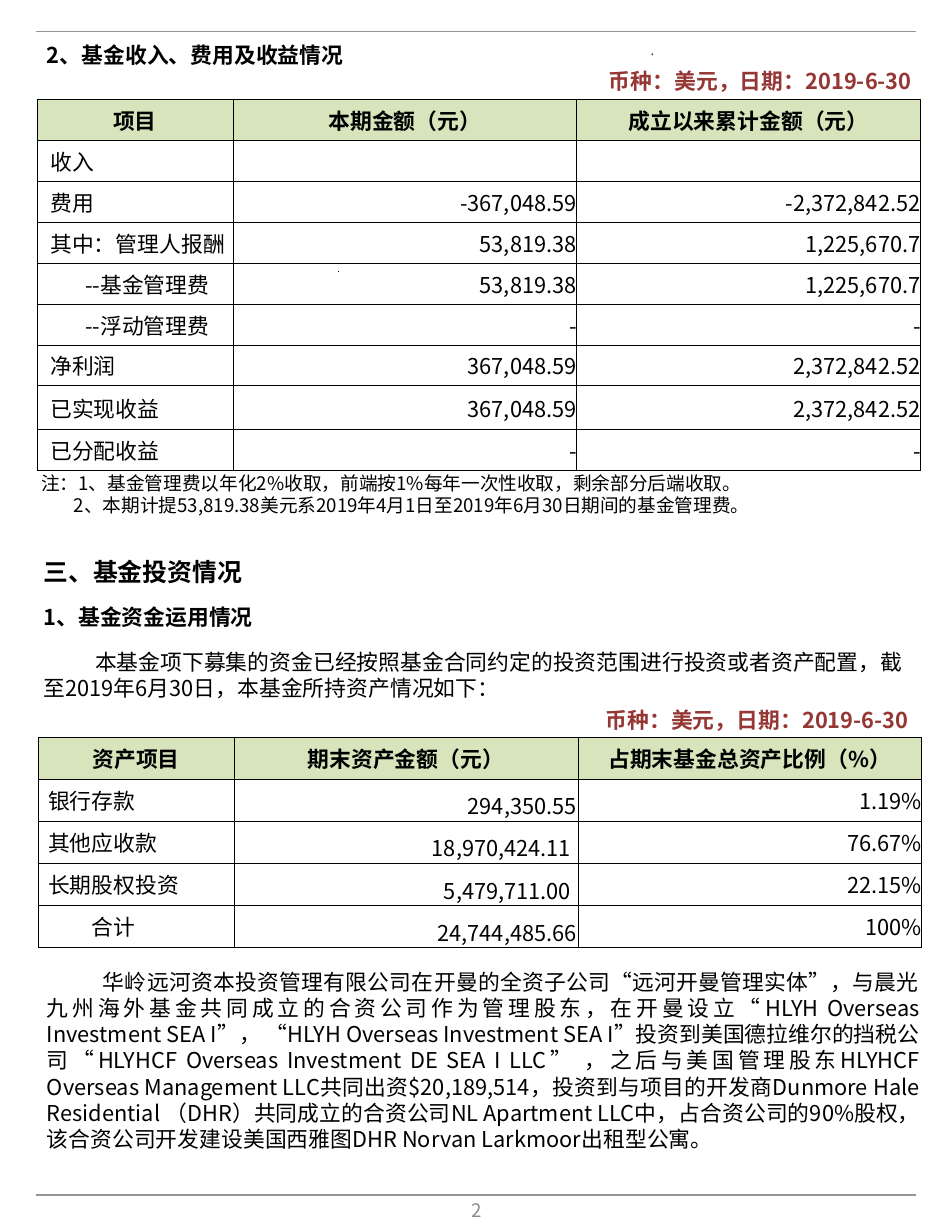
from dataclasses import dataclass

from lxml.etree import SubElement
from pptx import Presentation
from pptx.dml.color import RGBColor
from pptx.enum.shapes import MSO_CONNECTOR
from pptx.enum.text import MSO_ANCHOR, PP_ALIGN
from pptx.oxml.ns import qn
from pptx.util import Inches, Pt


@dataclass(frozen=True)
class Theme:
    face: str = "Noto Sans CJK SC"
    ink: str = "000000"
    red: str = "953735"
    green: str = "D7E4BC"
    rule: str = "939598"
    blue: str = "2E5A79"
    gray: str = "8C8C8C"
    head: int = 16
    body: int = 14
    note: int = 12
    lead: float = 1.2


T = Theme()
LEFT, MID, RIGHT = PP_ALIGN.LEFT, PP_ALIGN.CENTER, PP_ALIGN.RIGHT
DATE = "币种：美元，日期：2019-6-30"
COLS = [1.75, 3.07, 3.07]


def style(para, size=T.body, color=T.ink, bold=False, align=LEFT):
    para.alignment = align
    font = para.font
    font.name, font.size, font.bold = T.face, Pt(size), bold
    font.color.rgb = RGBColor.from_string(color)
    SubElement(font._element, qn("a:ea"), typeface=T.face)


def add_text(slide, box, lines, anchor=MSO_ANCHOR.TOP):
    frame = slide.shapes.add_textbox(*map(Inches, box)).text_frame
    frame.word_wrap = True
    frame.vertical_anchor = anchor
    for i, (text, look) in enumerate(lines):
        para = frame.add_paragraph() if i else frame.paragraphs[0]
        look = dict(look)
        gap, indent = look.pop("gap", 0), look.pop("indent", 0)
        lead = look.pop("lead", look.get("size", T.body) * T.lead)
        para.text = text
        style(para, **look)
        para.space_before, para.line_spacing = Pt(gap), Pt(lead)
        para._p.get_or_add_pPr().set("indent", str(Inches(indent)))


def add_line(slide, start, end, color):
    line = slide.shapes.add_connector(
        MSO_CONNECTOR.STRAIGHT, *map(Inches, start + end))
    line.line.color.rgb = RGBColor.from_string(color)
    line.line.width = Pt(1)
    SubElement(line._element.spPr, qn("a:effectLst"))


def add_dot(slide, x, y, side=0.01):
    form = slide.shapes.build_freeform(Inches(x), Inches(y))
    form.add_line_segments([(Inches(x + dx), Inches(y + dy)) for dx, dy in
                            ((side, 0), (side, side), (0, side))])
    dot = form.convert_to_shape()
    dot.shadow.inherit = False
    dot.fill.solid()
    dot.fill.fore_color.rgb = RGBColor.from_string(T.ink)
    dot.line.fill.background()


def edge(cell):
    props = cell._tc.get_or_add_tcPr()
    for side in ("lnL", "lnR", "lnT", "lnB"):
        line = SubElement(props, qn(f"a:{side}"), w=str(Pt(0.5)))
        fill = SubElement(line, qn("a:solidFill"))
        SubElement(fill, qn("a:srgbClr"), val=T.ink)


def add_grid(slide, box, head, rows, highs, low=False):
    shape = slide.shapes.add_table(len(highs), len(head), *map(Inches, box))
    table = shape.table
    table.first_row = table.horz_banding = False
    for col, wide in zip(table.columns, COLS):
        col.width = Inches(wide)
    for row, high in zip(table.rows, highs):
        row.height = Inches(high)
    data = [(0, *head)] + rows
    for r, (inset, *texts) in enumerate(data):
        for c, text in enumerate(texts):
            cell = table.cell(r, c)
            cell.margin_top = cell.margin_bottom = cell.margin_right = 0
            cell.margin_left = Inches(0 if c else inset)
            cell.vertical_anchor = (MSO_ANCHOR.BOTTOM if low and r and c == 1
                                    else MSO_ANCHOR.MIDDLE)
            para = cell.text_frame.paragraphs[0]
            para.text = text
            style(para, bold=r == 0,
                  align=MID if r == 0 else RIGHT if c else LEFT)
            edge(cell)
            if r == 0:
                cell.fill.solid()
                cell.fill.fore_color.rgb = RGBColor.from_string(T.green)
            else:
                cell.fill.background()
    return table


def add_frame(slide, x, y, wide, high):
    for top in (y, y + high):
        add_line(slide, (x, top), (x + wide, top), T.rule)
    add_text(slide, (x + 2.35, y + high - 0.07, 3.17, 0.4),
             [("2", dict(size=T.note, color=T.gray, align=MID))],
             MSO_ANCHOR.MIDDLE)
    add_line(slide, (x + 5.5, y + 0.21), (x + 5.51, y + 0.2), T.blue)


def add_income(slide, x, y, wide):
    add_text(slide, (x, y, wide, 0.57), [
        ("2、基金收入、费用及收益情况", dict(bold=True)),
        (DATE, dict(color=T.red, bold=True, align=RIGHT))])
    high, tall = 3.31, 0.39
    highs = [(high - tall) / 8] * 9
    highs[7] = tall
    near, far = 0.12, 0.43
    add_grid(slide, (x + 0.01, y + 0.57, sum(COLS), high),
             ("项目", "本期金额（元）", "成立以来累计金额（元）"), [
        (near, "收入", "", ""),
        (near, "费用", "-367,048.59", "-2,372,842.52"),
        (near, "其中：管理人报酬", "53,819.38", "1,225,670.7"),
        (far, "--基金管理费", "53,819.38", "1,225,670.7"),
        (far, "--浮动管理费", "-", "-"),
        (near, "净利润", "367,048.59", "2,372,842.52"),
        (near, "已实现收益", "367,048.59", "2,372,842.52"),
        (near, "已分配收益", "-", "-")], highs)
    for left in (2.7, 4.82):
        add_dot(slide, x + left, y + 2.1)
    add_text(slide, (x - 0.05, y + 3.84, wide, 0.5), [
        ("注：1、基金管理费以年化2%收取，前端按1%每年一次性收取，剩余部分后端收取。",
         dict(size=T.note)),
        ("2、本期计提53,819.38美元系2019年4月1日至2019年6月30日期间的基金管理费。",
         dict(size=T.note, indent=0.29))])


def add_assets(slide, x, y, wide):
    add_text(slide, (x, y, wide, 1.66), [
        ("三、基金投资情况", dict(size=T.head, bold=True)),
        ("1、基金资金运用情况", dict(bold=True, gap=11)),
        ("本基金项下募集的资金已经按照基金合同约定的投资范围进行投资或者资产配置，"
         "截至2019年6月30日，本基金所持资产情况如下：", dict(gap=12, indent=0.46)),
        (DATE, dict(color=T.red, bold=True, align=RIGHT, gap=12, lead=9))])
    high = 1.88
    near, far = 0.09, 0.48
    table = add_grid(slide, (x + 0.05, y + 1.66, sum(COLS), high),
                     ("资产项目", "期末资产金额（元）", "占期末基金总资产比例（%）"), [
        (near, "银行存款", "294,350.55", "1.19%"),
        (near, "其他应收款", "18,970,424.11", "76.67%"),
        (near, "长期股权投资", "5,479,711.00", "22.15%"),
        (far, "合计", "24,744,485.66", "100%")], [high / 5] * 5, low=True)
    for r, inset in enumerate((0.01, 0.06, 0.06, 0.01), 1):
        table.cell(r, 1).margin_right = Inches(inset)


def add_story(slide, x, y, wide):
    text = (
        "华岭远河资本投资管理有限公司在开曼的全资子公司“远河开曼管理实体”，"
        "与晨光九州海外基金共同成立的合资公司作为管理股东，"
        "在开曼设立“HLYH Overseas Investment SEA I”， "
        "“HLYH Overseas Investment SEA I”投资到美国德拉维尔的挡税公司"
        "“HLYHCF Overseas Investment DE SEA I LLC” ，"
        "之后与美国管理股东HLYHCF Overseas Management LLC共同出资$20,189,514，"
        "投资到与项目的开发商Dunmore Hale Residential （DHR）"
        "共同成立的合资公司NL Apartment LLC中，占合资公司的90%股权，"
        "该合资公司开发建设美国西雅图DHR Norvan Larkmoor出租型公寓。")
    add_text(slide, (x, y, wide, 1.99),
             [(text, dict(align=PP_ALIGN.JUSTIFY, indent=0.5))])


def main():
    deck = Presentation()
    deck.slide_width, deck.slide_height = Inches(8.5), Inches(11)
    slide = deck.slides.add_slide(deck.slide_layouts[6])
    add_frame(slide, 0.32, 0.28, 7.86, 10.39)
    add_income(slide, 0.32, 0.32, 7.92)
    add_assets(slide, 0.29, 4.92, 7.92)
    add_story(slide, 0.32, 8.6, 7.99)
    deck.save("out.pptx")


if __name__ == "__main__":
    main()
